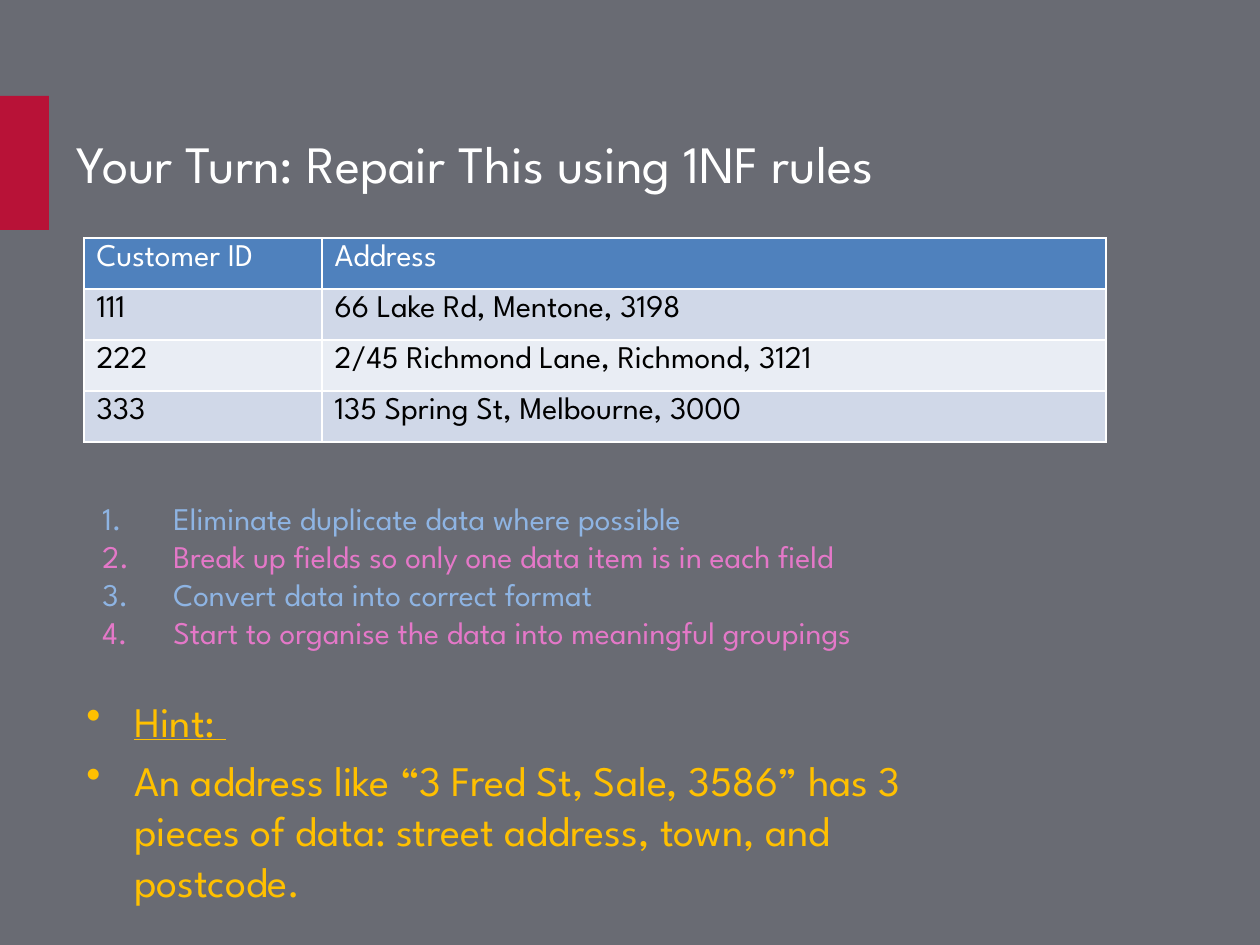
from dataclasses import dataclass

from lxml import etree
from pptx import Presentation
from pptx.dml.color import RGBColor
from pptx.enum.shapes import MSO_SHAPE
from pptx.enum.text import MSO_ANCHOR
from pptx.oxml.ns import qn
from pptx.util import Emu, Pt

RECT = MSO_SHAPE.RECTANGLE
TOP = MSO_ANCHOR.TOP
MIDDLE = MSO_ANCHOR.MIDDLE
SCALE = 914400 / 126


def px(n):
    return Emu(round(n * SCALE))


@dataclass(frozen=True)
class Theme:
    font: str = "League Spartan"
    back: str = "696B73"
    accent: str = "B81237"
    white: str = "FFFFFF"
    black: str = "000000"
    head: str = "4F81BD"
    bands: tuple = ("D0D8E8", "E9EDF4")
    steps: tuple = ("8EB4E3", "E478C8")
    hint: str = "FFC000"
    title: int = 30
    large: int = 24
    small: int = 18


class Deck:
    def __init__(self, theme):
        self.theme = theme
        self.show = Presentation()
        self.show.slide_width, self.show.slide_height = px(1260), px(945)
        self.slide = self.show.slides.add_slide(self.show.slide_layouts[6])
        self.paint(self.slide.background.fill, theme.back)

    def paint(self, fill, color):
        fill.solid()
        fill.fore_color.rgb = RGBColor.from_string(color)

    def label(self, para, text, size, color, **style):
        run = para.add_run()
        run.text = text
        form = {"name": self.theme.font, "size": Pt(size), **style}
        for key, value in form.items():
            setattr(run.font, key, value)
        run.font.color.rgb = RGBColor.from_string(color)

    def block(self, box, color):
        shape = self.slide.shapes.add_shape(RECT, *map(px, box))
        shape.shadow.inherit = False
        self.paint(shape.fill, color)
        shape.line.fill.background()

    def frame(self, box, anchor=TOP):
        frame = self.slide.shapes.add_textbox(*map(px, box)).text_frame
        form = {"word_wrap": True, "vertical_anchor": anchor}
        for key, value in form.items():
            setattr(frame, key, value)
        return frame

    def title(self, box, text):
        para = self.frame(box, MIDDLE).paragraphs[0]
        self.label(para, text, self.theme.title, self.theme.white)

    def items(self, box, rows, size, mark, indent, hang, gap=0):
        frame = self.frame(box)
        for i, (text, color, style) in enumerate(rows):
            para = frame.add_paragraph() if i else frame.paragraphs[0]
            para.space_after = Pt(gap)
            self.label(para, text, size, color, **style)
            props = para._p.get_or_add_pPr()
            props.set("marL", str(px(indent)))
            props.set("indent", str(-px(hang)))
            tag, key, value = mark
            etree.SubElement(props, qn(tag)).set(key, value)

    def border(self, cell, color):
        props = cell._tc.get_or_add_tcPr()
        for side in "LRTB":
            line = etree.SubElement(props, qn(f"a:ln{side}"), w=str(Pt(1)))
            fill = etree.SubElement(line, qn("a:solidFill"))
            etree.SubElement(fill, qn("a:srgbClr"), val=color)

    def table(self, left, top, widths, height, rows):
        theme = self.theme
        size = len(rows), len(widths)
        box = left, top, sum(widths), height * len(rows)
        table = self.slide.shapes.add_table(*size, *map(px, box)).table
        table.first_row = table.horz_banding = False
        for col, width in zip(table.columns, widths):
            col.width = px(width)
        for r, row in enumerate(rows):
            table.rows[r].height = px(height)
            fill = theme.bands[(r - 1) % 2] if r else theme.head
            ink = theme.black if r else theme.white
            for c, text in enumerate(row):
                cell = table.cell(r, c)
                self.border(cell, theme.white)
                self.paint(cell.fill, fill)
                para = cell.text_frame.paragraphs[0]
                self.label(para, text, theme.small, ink)

    def save(self):
        self.show.save("out.pptx")


def main():
    theme = Theme()
    deck = Deck(theme)
    deck.block((0, 96, 49, 134), theme.accent)
    deck.title((64, 96, 1134, 134), "Your Turn: Repair This using 1NF rules")

    hints = [
        ("Hint: ", theme.hint, {"underline": True}),
        ("An address like “3 Fred St, Sale, 3586” has 3 pieces of data: "
         "street address, town, and postcode.", theme.hint, {}),
    ]
    deck.items((74, 689, 895, 218), hints, theme.large,
               ("a:buChar", "char", "•"), 48, 48, 5)

    deck.table(84, 238, (238, 784), 51, [
        ("Customer ID", "Address"),
        ("111", "66 Lake Rd, Mentone, 3198"),
        ("222", "2/45 Richmond Lane, Richmond, 3121"),
        ("333", "135 Spring St, Melbourne, 3000"),
    ])

    steps = [
        "Eliminate duplicate data where possible",
        "Break up fields so only one data item is in each field",
        "Convert data into correct format",
        "Start to organise the data into meaningful groupings",
    ]
    rows = [(text, theme.steps[i % 2], {}) for i, text in enumerate(steps)]
    deck.items((35, 493, 1017, 165), rows, theme.small,
               ("a:buAutoNum", "type", "arabicPeriod"), 126, 71)
    deck.save()


if __name__ == "__main__":
    main()
